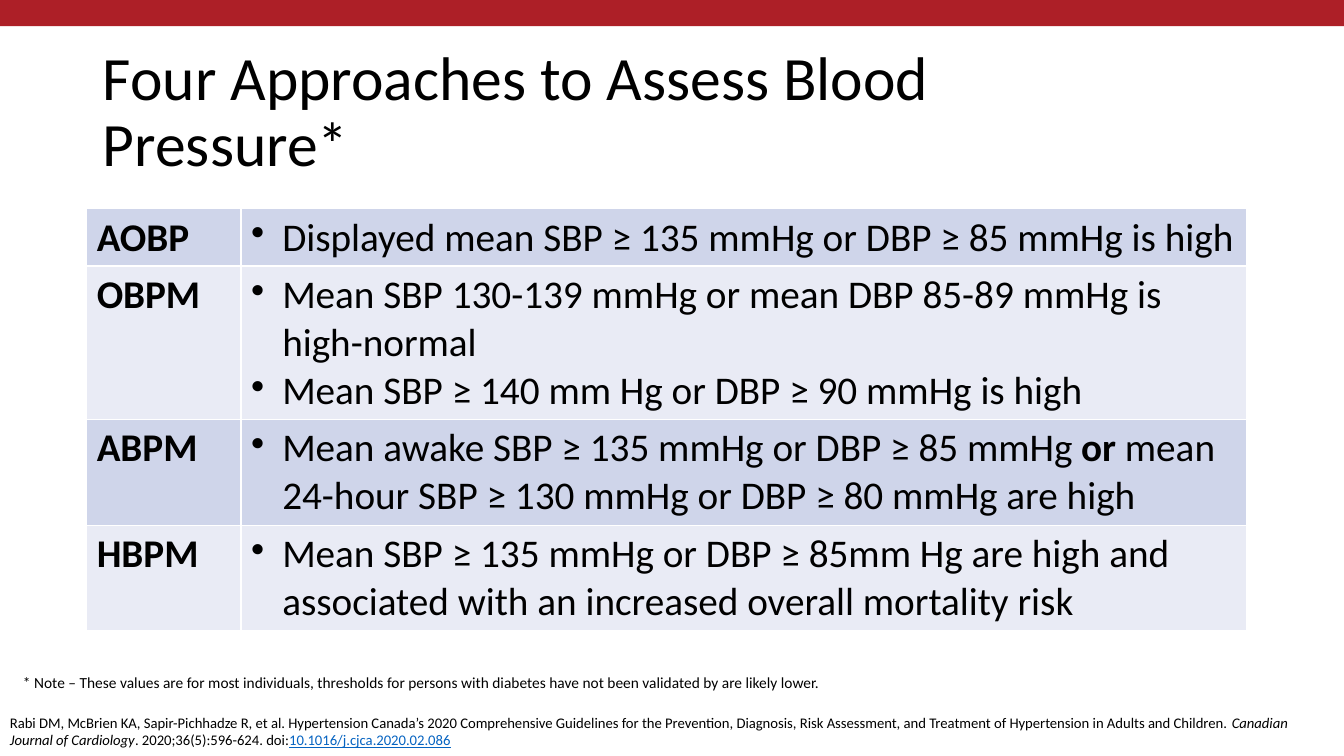
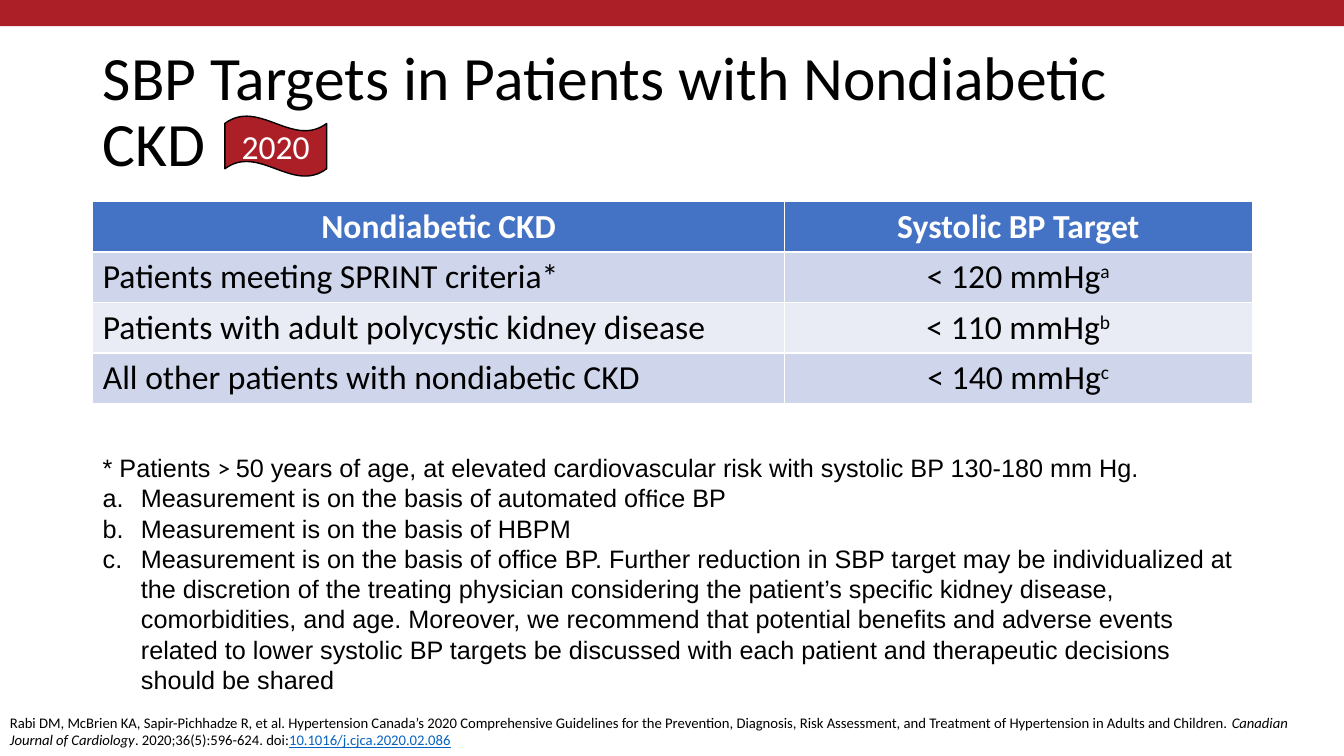
from lxml import etree
from pptx import Presentation
from pptx import util as u
from pptx.dml.color import RGBColor
from pptx.enum import shapes, text
from pptx.oxml.ns import qn

PX = 9144  # 100 px to the inch
WIDTH, HEIGHT = 1333, 750

BLACK, WHITE = "000000", "FFFFFF"
RED, BLUE, LINK = "AD1F27", "4472C4", "0563C1"
BANDS = ("CFD5EA", "E9EBF5")

LEFT, CENTER = text.PP_ALIGN.LEFT, text.PP_ALIGN.CENTER
DOT = ("a:buChar", "char", "•")
LETTER = ("a:buAutoNum", "type", "alphaLcPeriod")

CITATION = [
    ("Rabi DM, McBrien KA, Sapir-Pichhadze R, et al. Hypertension Canada’s 2020 "
     "Comprehensive Guidelines for the Prevention, Diagnosis, Risk Assessment, and "
     "Treatment of Hypertension in Adults and Children. ", {}),
    ("Canadian Journal of Cardiology", {"italic": True}),
    (". 2020;36(5):596-624. doi:", {}),
    ("10.1016/j.cjca.2020.02.086", {"color": LINK, "underline": True}),
]

APPROACHES = [
    ("AOBP", ["Displayed mean SBP ≥ 135 mmHg or DBP ≥ 85 mmHg is high"]),
    ("OBPM", ["Mean SBP 130-139 mmHg or mean DBP 85-89 mmHg is high-normal",
              "Mean SBP ≥ 140 mm Hg or DBP ≥ 90 mmHg is high"]),
    ("ABPM", [[("Mean awake SBP ≥ 135 mmHg or DBP ≥ 85 mmHg ", {}),
               ("or", {"bold": True}),
               (" mean 24-hour SBP ≥ 130 mmHg or DBP ≥ 80 mmHg are high", {})]]),
    ("HBPM", ["Mean SBP ≥ 135 mmHg or DBP ≥ 85mm Hg are high and associated with "
              "an increased overall mortality risk"]),
]

TARGETS = [
    ("Patients meeting SPRINT criteria*", "< 120 mmHg", "a"),
    ("Patients with adult polycystic kidney disease", "< 110 mmHg", "b"),
    ("All other patients with nondiabetic CKD", "< 140 mmHg", "c"),
]

CALIBRI = {"name": "Calibri"}
CRITERIA = [
    ("* Patients ", {}),
    ("> ", CALIBRI),
    ("50 years of age, at elevated cardiovascular risk with systolic BP 130-180 mm Hg.", {}),
]
MEASUREMENTS = [
    [("Measurement is on the basis of automated of", {}), ("fi", CALIBRI), ("ce BP", {})],
    "Measurement is on the basis of HBPM",
    "Measurement is on the basis of office BP. Further reduction in SBP target may be "
    "individualized at the discretion of the treating physician considering the patient’s "
    "specific kidney disease, comorbidities, and age. Moreover, we recommend that potential "
    "benefits and adverse events related to lower systolic BP targets be discussed with each "
    "patient and therapeutic decisions should be shared",
]


def px(*lengths):
    return [u.Emu(length * PX) for length in lengths]


def rgb(color):
    return RGBColor.from_string(color)


def paint(target, color):
    target.fill.solid()
    target.fill.fore_color.rgb = rgb(color)


def add_bullet(paragraph, bullet, indent):
    tag, name, value = bullet
    properties = paragraph._p.get_or_add_pPr()
    properties.set("marL", str(indent * PX))
    properties.set("indent", str(-indent * PX))
    etree.SubElement(properties, qn(tag)).set(name, value)


def write_runs(paragraph, content, size, align=LEFT, **base):
    """Fill a paragraph from a string or from (text, format) pairs."""
    paragraph.alignment = align
    pairs = [(content, {})] if isinstance(content, str) else content
    for words, changes in pairs:
        run = paragraph.add_run()
        run.text = words
        style = {"name": "Calibri", "color": BLACK, "bold": False, **base, **changes}
        run.font.size = u.Pt(size)
        run.font.color.rgb = rgb(style.pop("color"))
        if style.pop("superscript", False):
            run._r.get_or_add_rPr().set("baseline", "30000")
        for name, value in style.items():
            setattr(run.font, name, value)


def write_list(frame, items, bullet, indent, size, **base):
    """Write bulleted items, using the frame's first paragraph if it is empty."""
    for item in items:
        first = frame.paragraphs[0]
        paragraph = frame.add_paragraph() if first.runs else first
        add_bullet(paragraph, bullet, indent)
        write_runs(paragraph, item, size, **base)


def add_text(slide, box, content, size, **base):
    frame = slide.shapes.add_textbox(*px(*box)).text_frame
    frame.word_wrap = True
    frame.auto_size = text.MSO_AUTO_SIZE.SHAPE_TO_FIT_TEXT
    write_runs(frame.paragraphs[0], content, size, **base)
    return frame


def add_shape(slide, kind, box, color):
    shape = slide.shapes.add_shape(kind, *px(*box))
    shape.shadow.inherit = False
    paint(shape, color)
    shape.line.fill.background()
    return shape


def add_table(slide, left, top, widths, heights, header):
    """Add a table with banded body rows and, if asked, a blue first row."""
    frame = slide.shapes.add_table(len(heights), len(widths),
                                   *px(left, top, sum(widths), sum(heights)))
    table = frame.table
    table.first_row = header
    for column, width in zip(table.columns, px(*widths)):
        column.width = width
    for index, (row, height) in enumerate(zip(table.rows, px(*heights))):
        row.height = height
        color = BLUE if header and index == 0 else BANDS[(index - header) % 2]
        for cell in row.cells:
            paint(cell, color)
    return table


def prepare_layout(presentation):
    """Put the red band on the master and place the title on the layout."""
    layout = presentation.slide_layouts.get_by_name("Title Only")
    title = layout.placeholders[0]
    places = px(92, 40, 1030, 145)
    for name, value in zip(("left", "top", "width", "height"), places):
        setattr(title, name, value)
    return layout


def add_band(presentation, slide):
    band = add_shape(slide, shapes.MSO_SHAPE.RECTANGLE, (0, 0, WIDTH, 26), RED)
    presentation.slide_master.shapes.element.insert(2, band._element)


def add_slide(presentation, layout, heading):
    slide = presentation.slides.add_slide(layout)
    frame = slide.shapes.title.text_frame
    frame.auto_size = text.MSO_AUTO_SIZE.NONE
    frame.vertical_anchor = text.MSO_ANCHOR.MIDDLE
    paragraph = frame.paragraphs[0]
    paragraph.line_spacing = 0.9
    write_runs(paragraph, heading, 44)
    add_text(slide, (0, 703, WIDTH, 47), CITATION, 10.5)
    return slide


def add_approaches(slide):
    table = add_table(slide, 86, 207, (153, 997), (57, 152, 105, 105), False)
    for row, (name, findings) in zip(table.rows, APPROACHES):
        label, details = row.cells
        write_runs(label.text_frame.paragraphs[0], name, 28, bold=True)
        write_list(details.text_frame, findings, DOT, 31, 28)
    add_text(slide, (13, 663, 1320, 29),
             "* Note – These values are for most individuals, thresholds for persons with "
             "diabetes have not been validated by are likely lower.", 11)


def add_targets(slide):
    table = add_table(slide, 92, 200, (686, 464), [50] * 4, True)
    for column, heading in enumerate(("Nondiabetic CKD", "Systolic BP Target")):
        write_runs(table.cell(0, column).text_frame.paragraphs[0], heading, 24,
                   align=CENTER, color=WHITE, bold=True)
    for index, (patients, target, mark) in enumerate(TARGETS, 1):
        write_runs(table.cell(index, 0).text_frame.paragraphs[0], patients, 24)
        write_runs(table.cell(index, 1).text_frame.paragraphs[0],
                   [(target, {}), (mark, {"superscript": True})], 24, align=CENTER)
    notes = add_text(slide, (92, 444, 1150, 251), CRITERIA, 18, name="Arial")
    write_list(notes, MEASUREMENTS, LETTER, 38, 18, name="Arial")


def add_year_flag(slide):
    flag = add_shape(slide, shapes.MSO_SHAPE.WAVE, (223, 115, 101, 60), RED)
    flag.line.color.rgb = rgb(BLACK)
    flag.line.width = u.Pt(1)
    flag.text_frame.vertical_anchor = text.MSO_ANCHOR.MIDDLE
    write_runs(flag.text_frame.paragraphs[0], "2020", 24, align=CENTER, color=WHITE)


def main():
    presentation = Presentation()
    presentation.slide_width, presentation.slide_height = px(WIDTH, HEIGHT)
    layout = prepare_layout(presentation)

    approaches = add_slide(presentation, layout, "Four Approaches to Assess Blood Pressure*")
    add_band(presentation, approaches)
    add_approaches(approaches)

    targets = add_slide(presentation, layout, "SBP Targets in Patients with Nondiabetic CKD")
    add_targets(targets)
    add_year_flag(targets)

    presentation.save("out.pptx")


if __name__ == "__main__":
    main()
